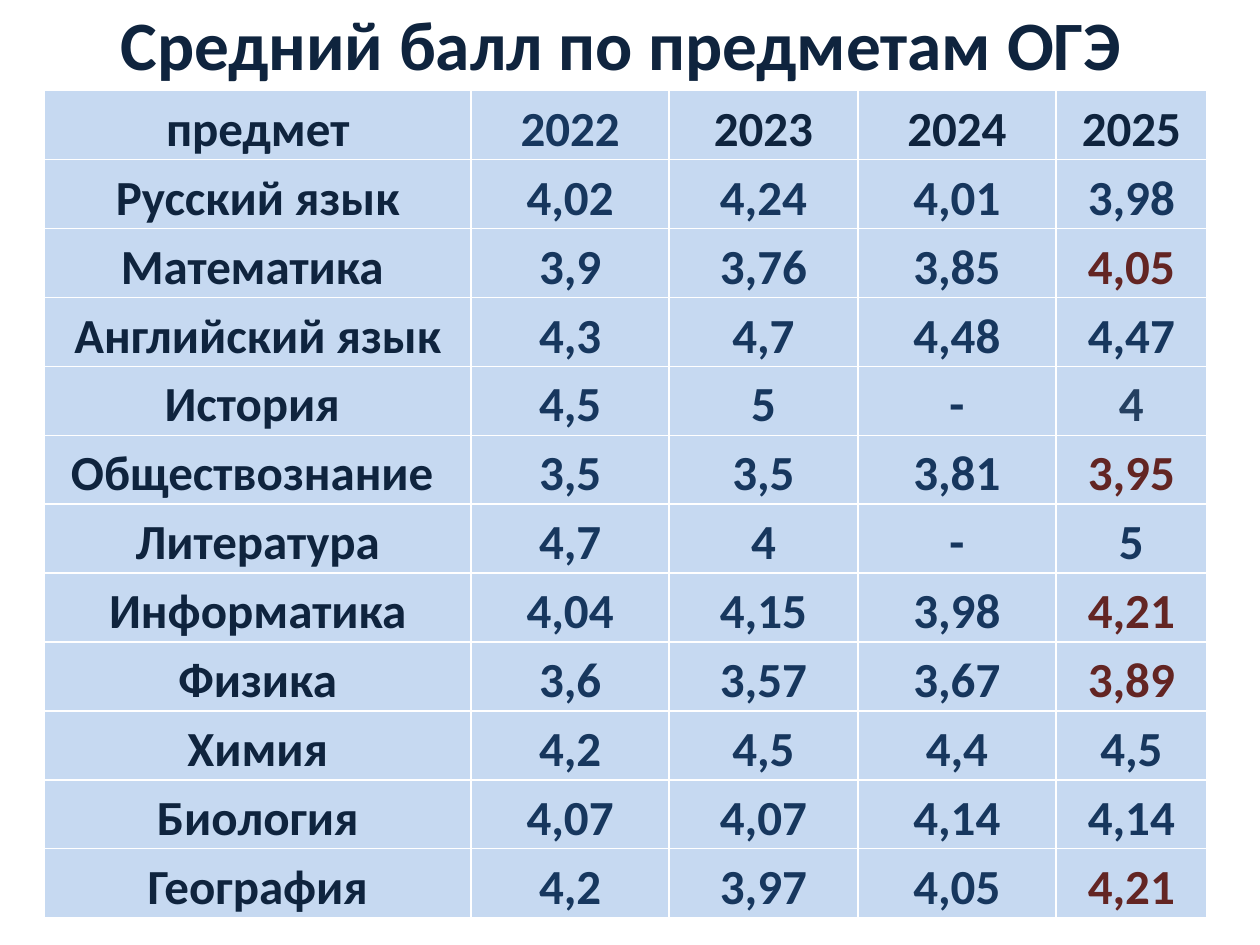
from dataclasses import dataclass
from pptx import Presentation
from pptx.dml.color import RGBColor
from pptx.enum.text import MSO_ANCHOR, MSO_AUTO_SIZE, PP_ALIGN
from pptx.util import Inches, Pt

TITLE = "Средний балл по предметам ОГЭ"
HEAD = ("предмет", "2022", "2023", "2024", "2025")
SCORES = [
    ("Русский язык", "4,02", "4,24", "4,01", "3,98"),
    ("Математика ", "3,9", "3,76", "3,85", "4,05"),
    ("Английский язык", "4,3", "4,7", "4,48", "4,47"),
    ("История ", "4,5", "5", "-", "4"),
    ("Обществознание ", "3,5", "3,5", "3,81", "3,95"),
    ("Литература", "4,7", "4", "-", "5"),
    ("Информатика", "4,04", "4,15", "3,98", "4,21"),
    ("Физика", "3,6", "3,57", "3,67", "3,89"),
    ("Химия", "4,2", "4,5", "4,4", "4,5"),
    ("Биология", "4,07", "4,07", "4,14", "4,14"),
    ("География", "4,2", "3,97", "4,05", "4,21"),
]
WIDTHS = (3.39, 1.57, 1.5, 1.57, 1.2)
ROW = 0.54


@dataclass(frozen=True)
class Theme:
    font: str = "Calibri"
    dark: str = "0F243E"
    blue: str = "17375E"
    slate: str = "254061"
    red: str = "632523"
    cell: str = "C6D9F1"
    title: float = 39.6
    body: float = 28


THEME = Theme()
# Cells (row, column) that break the colour rule of the table
ACCENTS = {(0, 1): THEME.blue, (4, 4): THEME.slate}
ACCENTS.update({(row, 4): THEME.red for row in (2, 5, 7, 8, 11)})


def style(para, size, color):
    para.alignment = PP_ALIGN.CENTER
    font = para.font
    font.name, font.size, font.bold = THEME.font, Pt(size), True
    font.color.rgb = RGBColor.from_string(color)


def add_title(slide):
    title = slide.shapes.title
    title.left, title.top = Inches(0.43), Inches(0)
    title.width, title.height = Inches(9), Inches(0.68)
    frame = title.text_frame
    frame.text = TITLE
    frame.auto_size = MSO_AUTO_SIZE.NONE
    frame.vertical_anchor = MSO_ANCHOR.MIDDLE
    style(frame.paragraphs[0], THEME.title, THEME.dark)


def fill_cell(cell, text, color):
    cell.text = text
    cell.margin_left = cell.margin_right = Inches(0.07)
    cell.margin_top = cell.margin_bottom = 0
    cell.fill.solid()
    cell.fill.fore_color.rgb = RGBColor.from_string(THEME.cell)
    para = cell.text_frame.paragraphs[0]
    para.line_spacing = 1.15
    style(para, THEME.body, color)


def add_scores(slide):
    rows = [HEAD, *SCORES]
    table = slide.shapes.add_table(
        len(rows), len(HEAD), Inches(0.35), Inches(0.72),
        Inches(sum(WIDTHS)), Inches(ROW * len(rows))).table
    table.horz_banding = False
    for col, width in zip(table.columns, WIDTHS):
        col.width = Inches(width)
    for r, row in enumerate(rows):
        for c, text in enumerate(row):
            base = THEME.dark if r == 0 or c == 0 else THEME.blue
            fill_cell(table.cell(r, c), text, ACCENTS.get((r, c), base))


def main():
    deck = Presentation()
    deck.slide_width, deck.slide_height = Inches(10), Inches(7.5)
    slide = deck.slides.add_slide(deck.slide_layouts[5])
    add_title(slide)
    add_scores(slide)
    deck.save("out.pptx")


if __name__ == "__main__":
    main()
